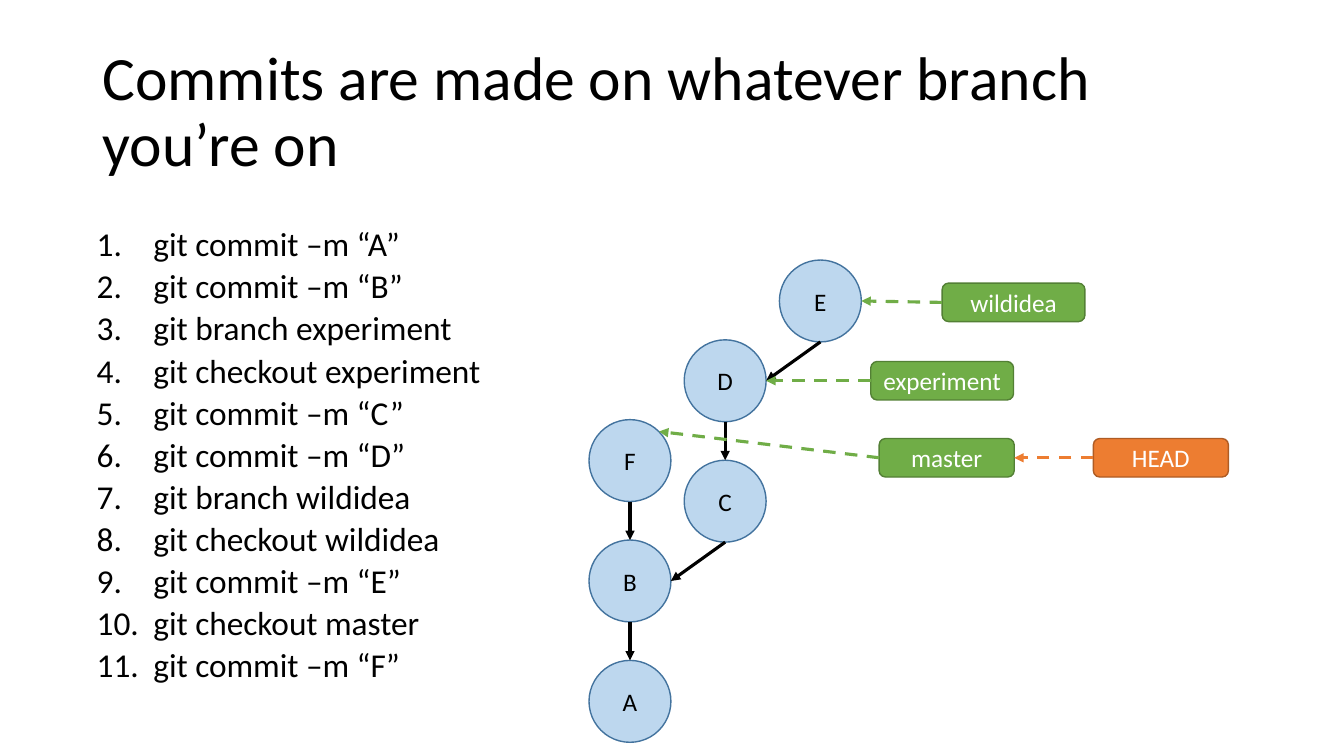
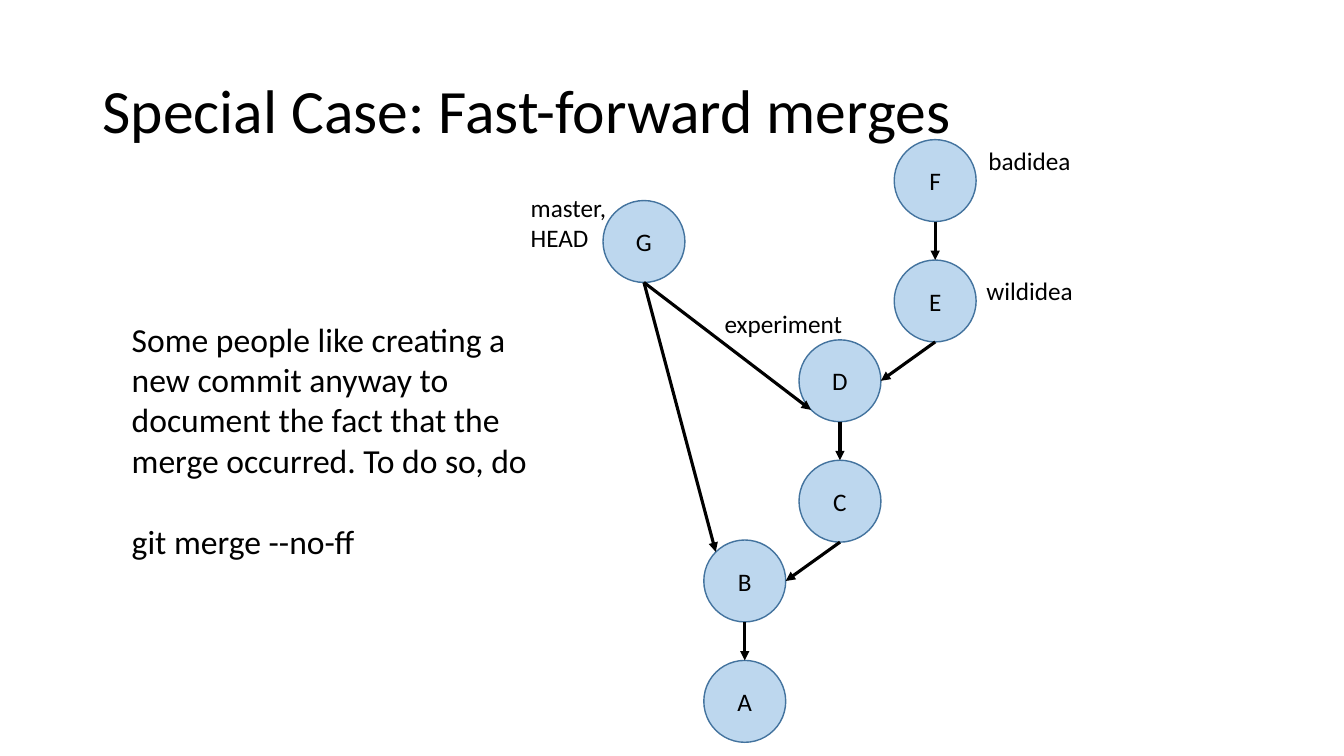
from dataclasses import dataclass
from enum import Enum

import lxml.etree
import pptx
import pptx.dml.color
import pptx.enum.dml
import pptx.enum.shapes
import pptx.enum.text
import pptx.oxml.ns
import pptx.presentation
import pptx.shapes.autoshape
import pptx.slide
import pptx.text.text
import pptx.util

Pt = pptx.util.Pt
PP_ALIGN = pptx.enum.text.PP_ALIGN
MSO_ANCHOR = pptx.enum.text.MSO_ANCHOR
MSO_SHAPE = pptx.enum.shapes.MSO_SHAPE
qn = pptx.oxml.ns.qn

FONT = "Calibri"
BLACK, WHITE = "000000", "FFFFFF"
COMMIT_FILL, COMMIT_LINE = "BDD7EE", "43739E"
BRANCH_FILL, BRANCH_LINE = "70AD47", "538035"
HEAD_FILL, HEAD_LINE = "ED7D31", "AF5C24"

DIAMETER = 58.5
COLUMN_STEP = 68
STRAIGHT_STEP = 86
DIAGONAL_STEP = 57
ROOT_Y = 501
TAG_HEIGHT = 27.5

Point = tuple[float, float]


class Site(Enum):
    """Points on a circle, as offsets from its centre in radii."""
    TOP = (0, -1)
    BOTTOM = (0, 1)
    RIGHT = (1, 0)
    TOP_LEFT = (-0.71, -0.71)
    TOP_RIGHT = (0.71, -0.71)
    BOTTOM_LEFT = (-0.71, 0.71)


@dataclass(frozen=True)
class Commit:
    name: str
    x: float
    y: float

    def site(self, site: Site) -> Point:
        across, down = site.value
        return self.x + across * DIAMETER / 2, self.y + down * DIAMETER / 2

    def above(self, name: str) -> "Commit":
        return Commit(name, self.x, self.y - STRAIGHT_STEP)

    def branching(self, name: str) -> "Commit":
        return Commit(name, self.x + COLUMN_STEP, self.y - DIAGONAL_STEP)


@dataclass(frozen=True)
class Tag:
    text: str
    left: float
    middle: float
    width: float
    fill: str = BRANCH_FILL
    line: str = BRANCH_LINE


@dataclass(frozen=True)
class Label:
    text: str
    left: float
    top: float
    width: float
    height: float = 29


def color(value: str) -> pptx.dml.color.RGBColor:
    return pptx.dml.color.RGBColor.from_string(value)


def write_text(
    frame: pptx.text.text.TextFrame,
    lines: list[str],
    size: float,
    font_color: str = BLACK,
    alignment: PP_ALIGN = PP_ALIGN.LEFT,
) -> None:
    frame.word_wrap = True
    for index, line in enumerate(lines):
        paragraph = frame.add_paragraph() if index else frame.paragraphs[0]
        paragraph.text = line
        paragraph.alignment = alignment
        paragraph.font.name = FONT
        paragraph.font.size = Pt(size)
        paragraph.font.color.rgb = color(font_color)


def add_titled_slide(
    presentation: pptx.presentation.Presentation, title: str
) -> pptx.slide.Slide:
    slide = presentation.slides.add_slide(presentation.slide_layouts.get_by_name("Title Only"))
    shape = slide.shapes.title
    shape.left, shape.top, shape.width, shape.height = Pt(66), Pt(29), Pt(828), Pt(104.4)
    frame = shape.text_frame
    write_text(frame, [title], 44)
    frame.auto_size = pptx.enum.text.MSO_AUTO_SIZE.NONE
    frame.vertical_anchor = MSO_ANCHOR.MIDDLE
    frame.paragraphs[0].line_spacing = 0.9
    return slide


def add_text(
    slide: pptx.slide.Slide,
    lines: list[str],
    left: float,
    top: float,
    width: float,
    height: float,
    size: float,
) -> pptx.text.text.TextFrame:
    box = slide.shapes.add_textbox(Pt(left), Pt(top), Pt(width), Pt(height))
    write_text(box.text_frame, lines, size)
    return box.text_frame


def number_paragraphs(frame: pptx.text.text.TextFrame, indent: float) -> None:
    for paragraph in frame.paragraphs:
        paragraph.line_spacing = 0.7
        paragraph.space_before = Pt(10)
        properties = paragraph._p.get_or_add_pPr()
        properties.set("marL", str(Pt(indent)))
        properties.set("indent", str(-Pt(indent)))
        numbering = lxml.etree.Element(qn("a:buAutoNum"), type="arabicPeriod")
        properties.find(qn("a:defRPr")).addprevious(numbering)


def style_shape(
    shape: pptx.shapes.autoshape.Shape, text: str, fill: str, line: str, font_color: str
) -> None:
    shape.shadow.inherit = False
    shape.fill.solid()
    shape.fill.fore_color.rgb = color(fill)
    shape.line.color.rgb = color(line)
    shape.line.width = Pt(1)
    shape.text_frame.vertical_anchor = MSO_ANCHOR.MIDDLE
    write_text(shape.text_frame, [text], 18, font_color, PP_ALIGN.CENTER)


def draw_commit(slide: pptx.slide.Slide, commit: Commit) -> None:
    radius = DIAMETER / 2
    circle = slide.shapes.add_shape(
        MSO_SHAPE.OVAL, Pt(commit.x - radius), Pt(commit.y - radius), Pt(DIAMETER), Pt(DIAMETER)
    )
    style_shape(circle, commit.name, COMMIT_FILL, COMMIT_LINE, BLACK)


def draw_arrow(
    slide: pptx.slide.Slide,
    start: Point,
    end: Point,
    line_color: str = BLACK,
    dashed: bool = False,
) -> None:
    arrow = slide.shapes.add_connector(
        pptx.enum.shapes.MSO_CONNECTOR.STRAIGHT,
        Pt(start[0]), Pt(start[1]), Pt(end[0]), Pt(end[1]),
    )
    arrow.line.color.rgb = color(line_color)
    arrow.line.width = Pt(2.25)
    if dashed:
        arrow.line.dash_style = pptx.enum.dml.MSO_LINE.DASH
    properties = arrow._element.spPr
    lxml.etree.SubElement(properties.find(qn("a:ln")), qn("a:tailEnd"), type="triangle")
    lxml.etree.SubElement(properties, qn("a:effectLst"))


def draw_tag(slide: pptx.slide.Slide, tag: Tag, target: Point) -> None:
    """Draw a branch or HEAD tag and the dashed arrow to what it points at."""
    shape = slide.shapes.add_shape(
        MSO_SHAPE.ROUNDED_RECTANGLE,
        Pt(tag.left), Pt(tag.middle - TAG_HEIGHT / 2), Pt(tag.width), Pt(TAG_HEIGHT),
    )
    style_shape(shape, tag.text, tag.fill, tag.line, WHITE)
    draw_arrow(slide, (tag.left, tag.middle), target, tag.fill, dashed=True)


def draw_history(slide: pptx.slide.Slide, root_x: float) -> dict[str, Commit]:
    """Draw commits A to E, which both slides share, and return them by name."""
    a = Commit("A", root_x, ROOT_Y)
    b = a.above("B")
    c = b.branching("C")
    d = c.above("D")
    e = d.branching("E")
    commits = [a, b, c, d, e]
    for commit in commits:
        draw_commit(slide, commit)
    for parent, child in zip(commits, commits[1:]):
        parent_site = Site.TOP if parent.x == child.x else Site.RIGHT
        draw_arrow(slide, child.site(Site.BOTTOM), parent.site(parent_site))
    return {commit.name: commit for commit in commits}


def draw_commit_above(slide: pptx.slide.Slide, parent: Commit, name: str) -> Commit:
    commit = parent.above(name)
    draw_commit(slide, commit)
    draw_arrow(slide, commit.site(Site.BOTTOM), parent.site(Site.TOP))
    return commit


def build_branch_slide(presentation: pptx.presentation.Presentation) -> None:
    slide = add_titled_slide(presentation, "Commits are made on whatever branch you’re on")
    commands = [
        "git commit –m “A”",
        "git commit –m “B”",
        "git branch experiment",
        "git checkout experiment",
        "git commit –m “C”",
        "git commit –m “D”",
        "git branch wildidea",
        "git checkout wildidea",
        "git commit –m “E”",
        "git checkout master",
        "git commit –m “F”",
    ]
    number_paragraphs(add_text(slide, commands, 62, 164, 376, 343, 23.8), 40.5)

    history = draw_history(slide, 450)
    f = draw_commit_above(slide, history["B"], "F")
    master = Tag("master", 628, 327, 96.5)
    head = Tag("HEAD", 781, 327, 96.5, HEAD_FILL, HEAD_LINE)
    draw_tag(slide, master, f.site(Site.TOP_RIGHT))
    draw_tag(slide, head, (master.left + master.width, master.middle))
    draw_tag(slide, Tag("experiment", 622, 272, 102), history["D"].site(Site.RIGHT))
    draw_tag(slide, Tag("wildidea", 673, 216, 102), history["E"].site(Site.RIGHT))


def build_merge_slide(presentation: pptx.presentation.Presentation) -> None:
    slide = add_titled_slide(presentation, "Special Case: Fast-forward merges")
    history = draw_history(slide, 532)
    draw_commit_above(slide, history["E"], "F")
    merge = Commit("G", 460, 172.5)
    draw_commit(slide, merge)
    for name, site in (("B", Site.TOP_LEFT), ("D", Site.BOTTOM_LEFT)):
        draw_arrow(slide, merge.site(Site.BOTTOM), history[name].site(site))

    labels = [
        Label("master, HEAD", 372, 134, 87, 51),
        Label("wildidea", 697.5, 193, 105),
        Label("badidea", 699, 100, 105),
        Label("experiment", 510.5, 217, 105),
    ]
    for label in labels:
        add_text(slide, [label.text], label.left, label.top, label.width, label.height, 18)

    advice = [
        "Some people like creating a new commit anyway to document the fact that "
        "the merge occurred. To do so, do",
        "git merge --no-ff",
    ]
    frame = add_text(slide, advice, 87, 224, 297.5, 181.5, 24)
    frame.paragraphs[1].space_before = Pt(29)


def main() -> None:
    presentation = pptx.Presentation()
    presentation.slide_width, presentation.slide_height = Pt(960), Pt(540)
    build_branch_slide(presentation)
    build_merge_slide(presentation)
    presentation.save("out.pptx")


if __name__ == "__main__":
    main()
